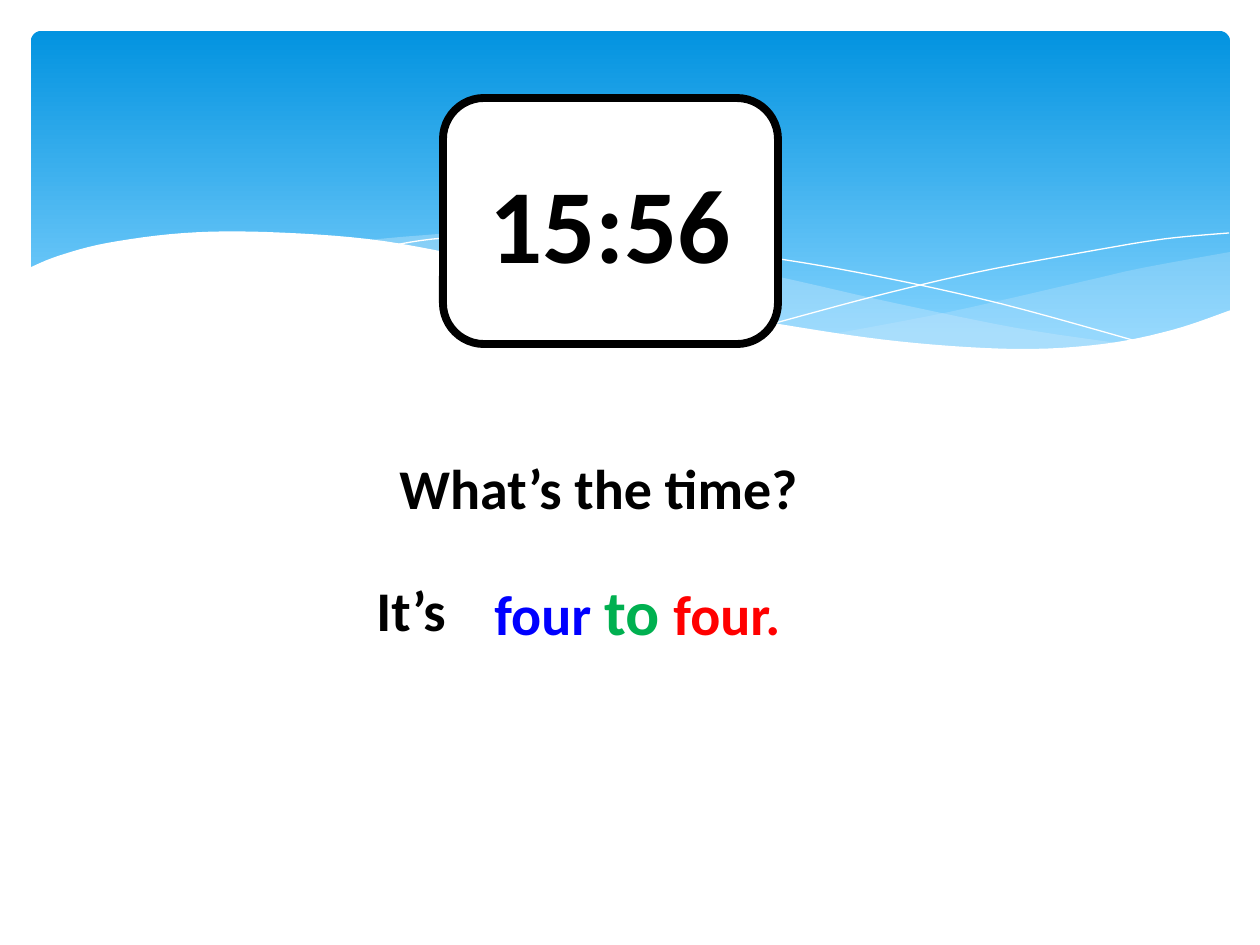
from dataclasses import dataclass
from pptx import Presentation
from pptx.dml.color import RGBColor as RGB
from pptx.enum.shapes import MSO_SHAPE as Kind
from pptx.enum.text import MSO_ANCHOR as Anchor, PP_ALIGN as Align
from pptx.oxml import parse_xml
from pptx.oxml.ns import nsdecls, qn
from pptx.util import Pt

UNIT = 914400 / 126


def px(n):
    return round(n * UNIT)


@dataclass(frozen=True)
class Theme:
    font: str = "Calibri"
    deep: str = "0293E0"
    light: str = "83D3FE"
    veil: str = "C6E7FC"
    white: str = "FFFFFF"
    black: str = "000000"
    blue: str = "0000FF"
    green: str = "00B050"
    red: str = "FF0000"
    body: int = 32
    large: int = 36
    clock: int = 60
    frame: float = 4.5


def smooth(knots, steps=6):
    ends = [knots[0], *knots, knots[-1]]
    points = [knots[0]]
    for a, b, c, d in zip(ends, ends[1:], ends[2:], ends[3:]):
        for step in range(1, steps + 1):
            t = step / steps
            points.append(tuple(
                q + t * (r - p) / 2 + t**2 * (2 * p - 5 * q + 4 * r - s) / 2
                + t**3 * (3 * q - p - 3 * r + s) / 2
                for p, q, r, s in zip(a, b, c, d)))
    return points


class Deck:
    """Holds the theme and the current slide, and draws each kind of element."""

    def __init__(self, theme):
        self.theme = theme
        self.file = Presentation()
        self.file.slide_width, self.file.slide_height = px(1260), px(945)
        self.slide = self.file.slides.add_slide(self.file.slide_layouts[6])

    def paint(self, shape, fill=None, line=None, width=0, alpha=100):
        shape.shadow.inherit = False
        if fill:
            shape.fill.solid()
            shape.fill.fore_color.rgb = RGB.from_string(fill)
            if alpha < 100:
                tone = shape.fill._xPr.find(qn("a:solidFill"))[0]
                tone.append(parse_xml(f'<a:alpha {nsdecls("a")} val="{alpha * 1000}"/>'))
        else:
            shape.fill.background()
        if line:
            shape.line.color.rgb = RGB.from_string(line)
            shape.line.width = Pt(width)
        else:
            shape.line.fill.background()

    def box(self, kind, area, **look):
        shape = self.slide.shapes.add_shape(kind, *map(px, area))
        self.paint(shape, **look)
        return shape

    def banner(self, area, bend):
        shape = self.box(Kind.ROUNDED_RECTANGLE, area)
        shape.adjustments[0] = bend
        shape.fill.gradient()
        shape.fill.gradient_angle = 270
        tones = (0, self.theme.deep), (0.9, self.theme.light)
        for stop, (place, tone) in zip(shape.fill.gradient_stops, tones):
            stop.position = place
            stop.color.rgb = RGB.from_string(tone)

    def curve(self, *edges, close=True, **look):
        points = [(px(x), px(y)) for edge in edges for x, y in smooth(edge)]
        pen = self.slide.shapes.build_freeform(*points[0])
        pen.add_line_segments(points[1:], close=close)
        self.paint(pen.convert_to_shape(), **look)

    def text(self, shape, *parts, align=Align.LEFT, anchor=Anchor.MIDDLE):
        frame = shape.text_frame
        frame.vertical_anchor = anchor
        line = frame.paragraphs[0]
        line.alignment = align
        for words, size, tone in parts:
            run = line.add_run()
            run.text = words
            run.font.name, run.font.size, run.font.bold = self.theme.font, Pt(size), True
            run.font.color.rgb = RGB.from_string(tone)

    def label(self, area, words, wrap=True):
        shape = self.slide.shapes.add_textbox(*map(px, area))
        shape.text_frame.word_wrap = wrap
        self.text(shape, (words, self.theme.body, self.theme.black), anchor=Anchor.TOP)


def waves(deck):
    look = deck.theme
    deck.curve(
        [(1230, 252), (1142, 268), (1085, 281), (949, 312), (833, 334)],
        [(833, 334), (939, 346), (1012, 350), (1076, 348), (1140, 339),
         (1187, 326), (1230, 311)],
        fill=look.veil, alpha=29)
    deck.curve(
        [(1125, 344), (1017, 328), (890, 302), (793, 280), (682, 256),
         (586, 241), (479, 233), (413, 236), (360, 241)],
        [(360, 241), (456, 256), (566, 280), (713, 312), (838, 335),
         (942, 348), (1031, 350), (1125, 344)],
        fill=look.veil, alpha=40)
    deck.curve(
        [(389, 246), (445, 238), (546, 236), (643, 242), (766, 257),
         (876, 276), (1002, 304), (1143, 343)],
        close=False, line=look.white)
    deck.curve(
        [(772, 324), (876, 296), (978, 272), (1091, 251), (1164, 239), (1229, 233)],
        close=False, line=look.white)
    deck.curve(
        [(1231, 310), (1172, 330), (1103, 344), (1019, 349), (915, 343),
         (816, 330), (699, 309), (563, 277), (460, 255), (368, 239),
         (266, 232), (184, 233), (107, 243), (58, 256), (29, 268)],
        [(29, 415), (1231, 415)],
        fill=look.white)


def main():
    look = Theme()
    deck = Deck(look)
    deck.banner((31, 31, 1199, 340), 0.03)
    waves(deck)
    clock = deck.box(Kind.ROUNDED_RECTANGLE, (443, 98, 335, 246),
                     fill=look.white, line=look.black, width=look.frame)
    deck.text(clock, ("15:56", look.clock, look.black), align=Align.CENTER)
    deck.label((387, 447, 554, 81), "What’s the time?")
    deck.label((364, 569, 103, 81), "It’s", wrap=False)
    reply = deck.box(Kind.RECTANGLE, (482, 561, 502, 98), fill=look.white)
    deck.text(reply, ("four ", look.body, look.blue), ("to ", look.large, look.green),
              ("four.", look.body, look.red))
    deck.file.save("out.pptx")


if __name__ == "__main__":
    main()
